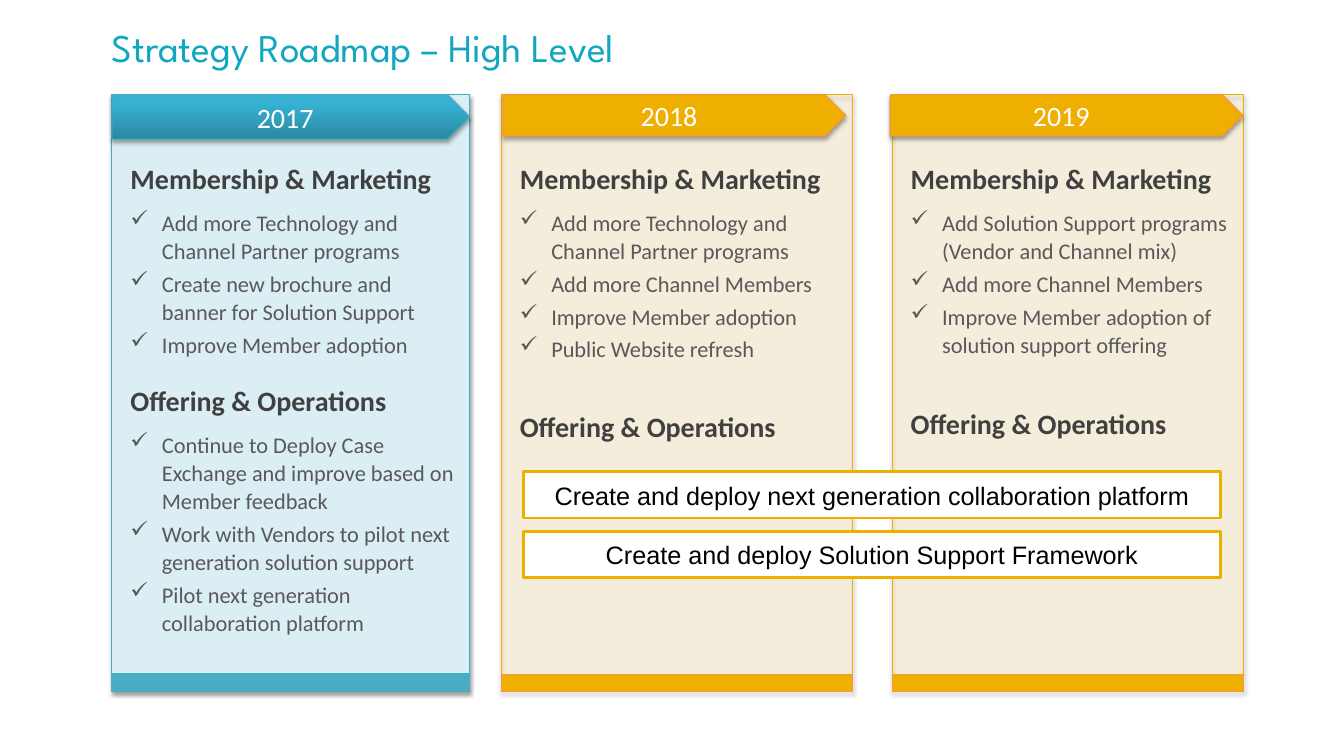
"""Build the Strategy Roadmap slide with three yearly columns."""
import pptx
import pptx.util
import pptx.dml.color
import pptx.enum.shapes
import pptx.enum.text
import pptx.oxml.ns
from lxml import etree

Pt = pptx.util.Pt
RGBColor = pptx.dml.color.RGBColor
MSO_SHAPE = pptx.enum.shapes.MSO_SHAPE
PP_ALIGN = pptx.enum.text.PP_ALIGN
MIDDLE = pptx.enum.text.MSO_ANCHOR.MIDDLE
qn = pptx.oxml.ns.qn

WHITE = RGBColor(0xFF, 0xFF, 0xFF)
BLACK = RGBColor(0x00, 0x00, 0x00)
TITLE = RGBColor(0x11, 0xA7, 0xBE)
HEADING = RGBColor(0x40, 0x40, 0x40)
BODY = RGBColor(0x59, 0x59, 0x59)
PALE_BLUE = RGBColor(0xDB, 0xEE, 0xF4)
BLUE_LINE = RGBColor(0x46, 0xAA, 0xC5)
BLUE_FOOT = RGBColor(0x4B, 0xAC, 0xC6)
BLUE_DARK = RGBColor(0x2A, 0x88, 0xA2)
BLUE_LIGHT = RGBColor(0x37, 0xB1, 0xD2)
GOLD = RGBColor(0xEE, 0xAF, 0x00)
ORANGE_LINE = RGBColor(0xF6, 0x92, 0x40)
ORANGE_FOOT = RGBColor(0xF7, 0x96, 0x46)

PANEL_TOP, PANEL_BOTTOM = 67.7, 493.9
MARKETING = "Membership & Marketing"
OPERATIONS = "Offering & Operations"


class Roadmap:
    """Holds the style and the current slide, and draws each kind of element."""

    def __init__(self, prs):
        self.slide = prs.slides.add_slide(prs.slide_layouts[6])
        self.font = "Calibri"

    def run(self, p, text, size, color, bold=False, font=None):
        """Add one styled run to a paragraph."""
        r = p.add_run()
        r.text = text
        r.font.name = font or self.font
        r.font.size = Pt(size)
        r.font.bold = bold
        r.font.color.rgb = color

    def shape(self, kind, x, y, w, h, fill, line, weight=0.75):
        """Add a filled and outlined preset shape without shadow."""
        s = self.slide.shapes.add_shape(kind, Pt(x), Pt(y), Pt(w), Pt(h))
        s.shadow.inherit = False
        s.fill.solid()
        s.fill.fore_color.rgb = fill
        s.line.color.rgb = line
        s.line.width = Pt(weight)
        return s

    def cast_shadow(self, s, distance, opacity):
        """Give a shape a soft shadow straight below it."""
        effects = s._element.spPr.find(qn("a:effectLst"))
        shadow = etree.SubElement(effects, qn("a:outerShdw"), blurRad=str(Pt(3.1)),
                                  dist=str(Pt(distance)), dir="5400000", rotWithShape="0")
        color = etree.SubElement(shadow, qn("a:srgbClr"), val=str(BLACK))
        etree.SubElement(color, qn("a:alpha"), val=str(opacity * 1000))

    def panel(self, x, w, fill, line, opacity):
        """Add the tall background of a column."""
        s = self.shape(MSO_SHAPE.RECTANGLE, x, PANEL_TOP, w, PANEL_BOTTOM - PANEL_TOP, fill, line)
        if opacity < 100:
            color = s._element.spPr.find(qn("a:solidFill"))[0]
            etree.SubElement(color, qn("a:alpha"), val=str(opacity * 1000))
        self.cast_shadow(s, 1.6, 38)

    def year(self, text, x, w, h, line, gradient):
        """Add the arrow that names the year of a column."""
        s = self.shape(MSO_SHAPE.PENTAGON, x, PANEL_TOP, w, h, GOLD, line)
        if gradient:
            s.fill.gradient()
            s.fill.gradient_angle = 90
            for stop, color, position in zip(s.fill.gradient_stops, gradient, (0, 0.8)):
                stop.color.rgb = color
                stop.position = position
        self.cast_shadow(s, 1.8, 35)
        self.centre(s, text, 20)

    def centre(self, s, text, size, color=WHITE, font=None):
        """Write one centred line in a shape."""
        tf = s.text_frame
        tf.vertical_anchor = MIDDLE
        p = tf.paragraphs[0]
        p.alignment = PP_ALIGN.CENTER
        self.run(p, text, size, color, font=font)

    def text_box(self, x, y, w, h):
        """Add a wrapping text box and return its frame."""
        tf = self.slide.shapes.add_textbox(Pt(x), Pt(y), Pt(w), Pt(h)).text_frame
        tf.word_wrap = True
        return tf

    def title(self, text):
        """Add the slide title."""
        tf = self.text_box(47.5, 9.4, 610, 48.2)
        tf.margin_left = Pt(32.4)
        tf.vertical_anchor = MIDDLE
        self.run(tf.paragraphs[0], text, 28, TITLE, font="League Spartan")

    def indent(self, p, left, first, before, after):
        """Set the indents and spacing of a paragraph."""
        pPr = p._p.get_or_add_pPr()
        pPr.set("marL", str(Pt(left)))
        pPr.set("indent", str(Pt(first)))
        p.line_spacing = 1.05
        p.space_before = Pt(before)
        p.space_after = Pt(after)

    def body(self, x, y, w, h, sections, gap):
        """Add the headings and checked items of a column."""
        tf = self.text_box(x, y, w, h)
        for i, (heading, items) in enumerate(sections):
            p = tf.add_paragraph() if i else tf.paragraphs[0]
            self.indent(p, 27.2, 0, gap if i else 0, 6)
            self.run(p, heading, 20, HEADING, bold=True)
            for item in items:
                p = tf.add_paragraph()
                etree.SubElement(p._p.get_or_add_pPr(), qn("a:buChar"), char="✓")
                self.indent(p, 49.7, -22.5, 3.2, 0)
                self.run(p, item, 16, BODY)

    def initiative(self, y, text):
        """Add a box that spans the last two columns."""
        s = self.shape(MSO_SHAPE.RECTANGLE, 373.7, y, 498.2, 33.1, WHITE, GOLD, 2)
        self.centre(s, text, 18, BLACK, "Arial")


COLUMNS = [
    dict(panel=(79.9, 255.6, PALE_BLUE, BLUE_LINE, 100),
         year=("2017", 79.9, 255.6, 31.7, BLUE_LINE, (BLUE_DARK, BLUE_LIGHT)),
         foot=(13, BLUE_FOOT, BLUE_FOOT), gap=17,
         sections=[(MARKETING, ["Add more Technology and Channel Partner programs",
                                "Create new brochure and banner for Solution Support",
                                "Improve Member adoption"]),
                   (OPERATIONS, ["Continue to Deploy Case Exchange and improve based on Member feedback",
                                 "Work with Vendors to pilot next generation solution support",
                                 "Pilot next generation collaboration platform"])]),
    dict(panel=(358, 251.3, GOLD, GOLD, 10),
         year=("2018", 359.3, 244.8, 29.5, ORANGE_LINE, None),
         foot=(12.2, GOLD, ORANGE_FOOT), gap=32.5,
         sections=[(MARKETING, ["Add more Technology and Channel Partner programs",
                                "Add more Channel Members",
                                "Improve Member adoption",
                                "Public Website refresh"]),
                   (OPERATIONS, [])]),
    dict(panel=(637.2, 251.3, GOLD, GOLD, 10),
         year=("2019", 635.8, 252, 29.5, ORANGE_LINE, None),
         foot=(12.2, GOLD, ORANGE_FOOT), gap=34,
         sections=[(MARKETING, ["Add Solution Support programs (Vendor and Channel mix)",
                                "Add more Channel Members",
                                "Improve Member adoption of solution support offering"]),
                   (OPERATIONS, [])]),
]


def main():
    """Draw the slide and save it."""
    prs = pptx.Presentation()
    prs.slide_width, prs.slide_height = Pt(960), Pt(540)
    roadmap = Roadmap(prs)
    roadmap.title("Strategy Roadmap – High Level")
    for column in COLUMNS:
        x, w = column["panel"][:2]
        foot_height, fill, line = column["foot"]
        roadmap.panel(*column["panel"])
        roadmap.year(*column["year"])
        roadmap.body(x - 21, 110.5, w + 21, 379 if column["sections"][1][1] else 245,
                     column["sections"], column["gap"])
        roadmap.shape(MSO_SHAPE.RECTANGLE, x, PANEL_BOTTOM - foot_height, w, foot_height, fill, line)
    roadmap.initiative(337, "Create and deploy next generation collaboration platform")
    roadmap.initiative(379.4, "Create and deploy Solution Support Framework")
    prs.save("out.pptx")


if __name__ == "__main__":
    main()
